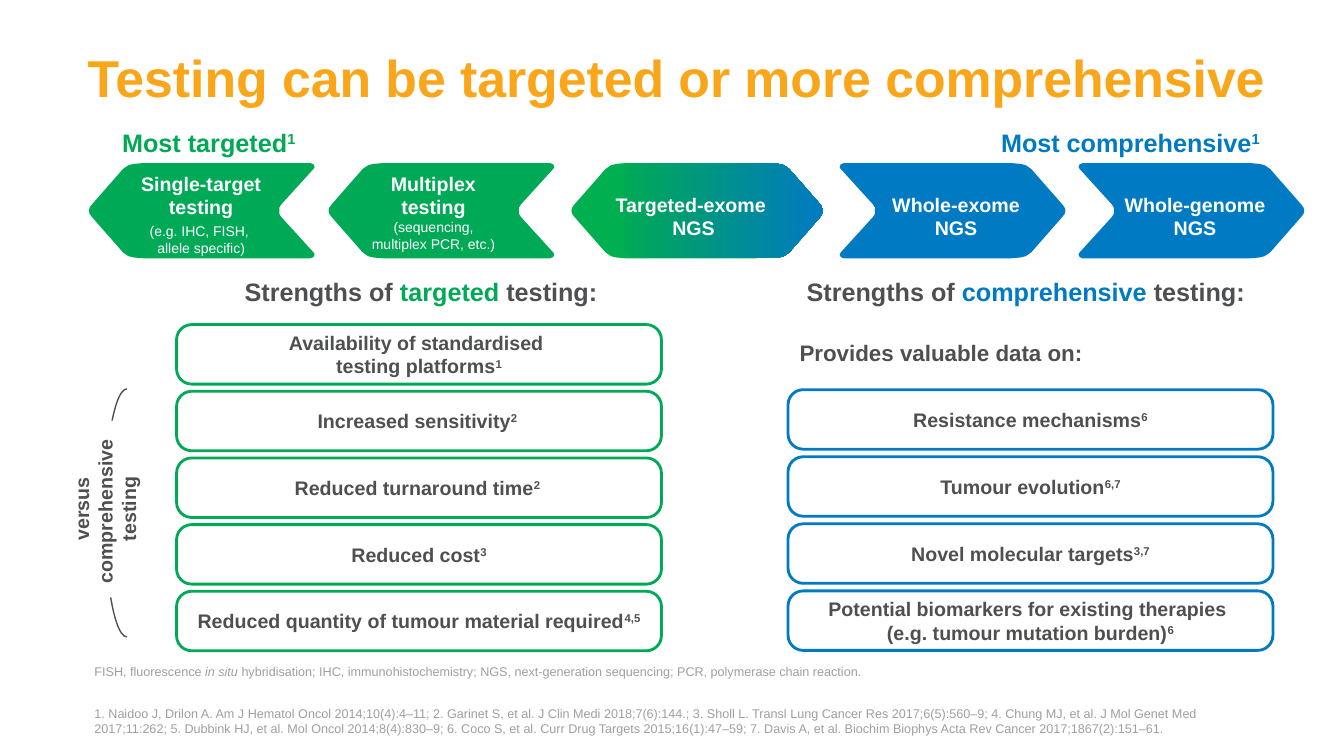
from pptx import Presentation
from pptx import util as u
from pptx.dml.color import RGBColor
from pptx.enum import shapes, text
from pptx.oxml import parse_xml
from pptx.oxml.ns import nsdecls

ORANGE = RGBColor(0xFA, 0xA6, 0x1A)
GREEN = RGBColor(0x00, 0xA9, 0x55)
LIGHT_GREEN = RGBColor(0x00, 0xB0, 0x50)
BLUE = RGBColor(0x00, 0x7A, 0xC2)
DARK_GREY = RGBColor(0x4D, 0x4F, 0x51)
PALE_GREY = RGBColor(0x9D, 0x9F, 0xA2)
WHITE = RGBColor(0xFF, 0xFF, 0xFF)

CENTER, LEFT, RIGHT = text.PP_ALIGN.CENTER, text.PP_ALIGN.LEFT, text.PP_ALIGN.RIGHT
TOP, MIDDLE = text.MSO_ANCHOR.TOP, text.MSO_ANCHOR.MIDDLE
NO_FIT, GROW = text.MSO_AUTO_SIZE.NONE, text.MSO_AUTO_SIZE.SHAPE_TO_FIT_TEXT

# Upper halves of the arrow outlines in cm, from the middle of the left end
ARROW_TOP, ARROW_HEIGHT, ARROW_WIDTH, BLOCK_WIDTH = 4.11, 2.4, 5.69, 5.03
NOTCH = [(0.89, 1.2), (0.89, 1.12), (0.84, 1.04), (0.03, 0.15), (0, 0.1), (0.03, 0.03), (0.11, 0)]
BLUNT = [(0, 1.2), (0, 0.23), (0.1, 0.08), (0.23, 0.02), (0.38, 0)]
TIP = [(4.32, 0), (4.55, 0.02), (4.68, 0.05), (4.73, 0.08), (4.83, 0.15),
       (5.61, 1.04), (5.67, 1.12), (5.69, 1.2)]
BLOCK_TIP = [(x - ARROW_WIDTH + BLOCK_WIDTH, y) for x, y in TIP]


class TestingSlide:
    font = "Arial"

    def __init__(self, deck):
        self.slide = deck.slides.add_slide(deck.slide_layouts[1])
        self.shapes = self.slide.shapes

    def set_text(self, shape, paragraphs, size, color, bold=True, align=CENTER,
                 anchor=TOP, insets=(0.18,) * 4, fit=NO_FIT, **spacing):
        """Fill a shape with paragraphs, each a list of (text, run overrides)."""
        frame = shape.text_frame
        sides = ("margin_left", "margin_top", "margin_right", "margin_bottom")
        layout = dict(zip(sides, map(u.Cm, insets)),
                      word_wrap=True, auto_size=fit, vertical_anchor=anchor)
        for key, value in layout.items():
            setattr(frame, key, value)
        for number, runs in enumerate(paragraphs):
            paragraph = frame.add_paragraph() if number else frame.paragraphs[0]
            for key, value in dict(alignment=align, space_before=u.Pt(0), **spacing).items():
                setattr(paragraph, key, value)
            for words, changes in runs:
                style = dict(size=size, color=color, bold=bold, name=self.font) | changes
                self.add_run(paragraph, words, style)
        return frame

    def add_run(self, paragraph, words, style):
        raised, color = style.pop("raised", False), style.pop("color")
        style["size"] = u.Pt(style["size"])
        for number, line in enumerate(words.split("\n")):
            if number:
                paragraph.add_line_break()
            run = paragraph.add_run()
            run.text = line
            for key, value in style.items():
                setattr(run.font, key, value)
            run.font.color.rgb = color
            if raised:
                run.font._element.set("baseline", "30000")

    def placeholder(self, index, box, paragraphs, **style):
        holder = self.slide.placeholders[index]
        for key, value in zip(("left", "top", "width", "height"), box):
            setattr(holder, key, u.Cm(value))
        return self.set_text(holder, paragraphs, **style)

    def label(self, box, paragraphs, **style):
        return self.set_text(self.shapes.add_textbox(*map(u.Cm, box)), paragraphs, **style)

    def box(self, kind, box, fill=None, line=None, weight=2):
        shape = self.shapes.add_shape(kind, *map(u.Cm, box))
        self.paint(shape, fill)
        if line is not None:
            shape.line.color.rgb = line
            shape.line.width = u.Pt(weight)
        return shape

    def paint(self, shape, fill):
        shape.shadow.inherit = False
        shape.line.fill.background()
        if fill is None:
            shape.fill.background()
        else:
            shape.fill.solid()
            shape.fill.fore_color.rgb = fill

    def arrow(self, left, upper_half, fill, width=ARROW_WIDTH, flipped=False):
        """Draw an arrow from its upper half, mirrored downwards."""
        outline = upper_half + [(x, ARROW_HEIGHT - y) for x, y in reversed(upper_half)]
        points = [(u.Cm(left + (width - x if flipped else x)), u.Cm(ARROW_TOP + y))
                  for x, y in outline]
        builder = self.shapes.build_freeform(*points[0])
        builder.add_line_segments(points[1:], close=True)
        shape = builder.convert_to_shape()
        self.paint(shape, fill)
        return shape

    def card(self, left, top, words, source, line, **style):
        card = self.box(shapes.MSO_SHAPE.ROUNDED_RECTANGLE, (left, top, 12.22, 1.5), WHITE, line)
        card.adjustments[0] = 0.254
        runs = [(words, {})] + ([(source, {"raised": True})] if source else [])
        self.set_text(card, [runs], **(dict(size=14, color=DARK_GREY, anchor=MIDDLE) | style))


def add_arrows(page):
    for left, flipped, color in [(21.16, False, BLUE), (27.18, False, BLUE),
                                 (2.24, True, GREEN), (8.28, True, GREEN)]:
        page.arrow(left, NOTCH + TIP, color, flipped=flipped)
    page.arrow(14.4, BLUNT + BLOCK_TIP, LIGHT_GREEN, BLOCK_WIDTH, flipped=True)
    blend = page.arrow(15.72, BLUNT + BLOCK_TIP, BLUE, BLOCK_WIDTH)
    blend.fill.gradient()
    blend.fill.gradient_angle = 0
    for stop, color in zip(blend.fill.gradient_stops, (GREEN, BLUE)):
        stop.color.rgb = color

    for box, method, example, gap in [
            ((2.95, 4.14, 4.62, 2.51), "Single-target testing", "(e.g. IHC, FISH, \nallele specific)", 3),
            ((9.25, 4.14, 3.73, 2.44), "Multiplex testing", "(sequencing, multiplex PCR, etc.)", 0),
            ((14.99, 4.67, 5.36, 1.57), "Targeted-exome \nNGS", None, 0),
            ((22.23, 4.67, 4.11, 1.57), "Whole-exome NGS", None, 0),
            ((28.12, 4.67, 4.37, 1.57), "Whole-genome NGS", None, 0)]:
        paragraphs = [[(method, {})]]
        if example:
            paragraphs.append([(example, {"size": 10, "bold": False})])
        frame = page.label(box, paragraphs, size=14, color=WHITE,
                           insets=(0, 0.18, 0.38, 0.18), fit=GROW)
        frame.paragraphs[-1].space_before = u.Pt(gap)

    for box, extreme, color, align in [
            ((2.95, 3.07, 5.28, 1.02), "Most targeted", GREEN, LEFT),
            ((22.23, 3.07, 9.65, 1.02), "Most comprehensive", BLUE, RIGHT)]:
        page.label(box, [[(extreme, {}), ("1", {"raised": True})]], size=18, color=color,
                   align=align, insets=(0.13,) * 4, fit=GROW)


def add_strengths(page):
    brace = page.box(shapes.MSO_SHAPE.ARC, (2.64, 9.8, 1.12, 6.25), line=DARK_GREY, weight=1)
    brace.adjustments[0], brace.adjustments[1] = 54, 162
    versus = page.box(shapes.MSO_SHAPE.RECTANGLE, (0.41, 11.76, 4.45, 2.13), WHITE)
    versus.rotation = 270
    page.set_text(versus, [[("versus\ncomprehensive \ntesting", {})]], size=14, color=DARK_GREY,
                  insets=(0.33, 0.18, 0.33, 0.18), fit=GROW)

    targeted = [("Availability of standardised \ntesting platforms", "1"),
                ("Increased sensitivity", "2 "),
                ("Reduced turnaround time", "2 "),
                ("Reduced cost", "3"),
                ("Reduced quantity of tumour material required", "4,5")]
    for row, (strength, source) in enumerate(targeted):
        page.card(4.45, 8.18 + 1.68 * row, strength, source, GREEN)

    comprehensive = [("Resistance mechanisms", "6"),
                     ("Tumour evolution", "6,7"),
                     ("Novel molecular targets", "3,7"),
                     ("Potential biomarkers for existing therapies \n(e.g. tumour mutation burden)", "6")]
    page.card(19.86, 8.13, "Provides valuable data on:", None, None, size=16, align=LEFT)
    for row, (strength, source) in enumerate(comprehensive, 1):
        page.card(19.86, 8.13 + 1.69 * row, strength, source, BLUE)

    for left, kind, color in [(4.5, "targeted", GREEN), (19.74, "comprehensive", BLUE)]:
        heading = [("Strengths of ", {}), (kind, {"color": color}), (" testing:", {})]
        page.label((left, 6.78, 12.22, 1.12), [heading], size=18, color=DARK_GREY,
                   anchor=MIDDLE, insets=(0.33, 0.18, 0.33, 0.18), fit=GROW)


def add_footer(page):
    small = dict(size=9, color=PALE_GREY, bold=False, align=LEFT, insets=(0.25, 0.13, 0.25, 0.13))
    page.label((2.13, 17.65, 29.59, 1.3), [[(
        "1. Naidoo J, Drilon A. Am J Hematol Oncol 2014;10(4):4–11; "
        "2. Garinet S, et al. J Clin Medi 2018;7(6):144.; "
        "3. Sholl L. Transl Lung Cancer Res 2017;6(5):560–9; "
        "4. Chung MJ, et al. J Mol Genet Med 2017;11:262; "
        "5. Dubbink HJ, et al. Mol Oncol 2014;8(4):830–9; "
        "6. Coco S, et al. Curr Drug Targets 2015;16(1):47–59; "
        "7. Davis A, et al. Biochim Biophys Acta Rev Cancer 2017;1867(2):151–61.", {})]], **small)
    abbreviations = page.placeholder(1, (2.13, 16.61, 28.32, 0.79), [[
        ("FISH, fluorescence ", {}), ("in situ ", {"italic": True}),
        ("hybridisation; IHC, immunohistochemistry; NGS, next-generation sequencing; "
         "PCR, polymerase chain reaction.", {})]], **small)
    properties = abbreviations.paragraphs[0]._p.get_or_add_pPr()
    for key in ("marL", "indent"):
        properties.set(key, "0")
    properties.append(parse_xml(f"<a:buNone {nsdecls('a')}/>"))


def main():
    deck = Presentation()
    deck.slide_width, deck.slide_height = u.Cm(33.87), u.Cm(19.05)
    page = TestingSlide(deck)
    page.placeholder(0, (2.21, 1.02, 30.66, 2.16),
                     [[("Testing can be targeted or more comprehensive", {})]], size=37,
                     color=ORANGE, align=LEFT, anchor=MIDDLE, insets=(0,) * 4, line_spacing=0.75)
    add_footer(page)
    add_arrows(page)
    add_strengths(page)
    deck.save("out.pptx")


if __name__ == "__main__":
    main()
